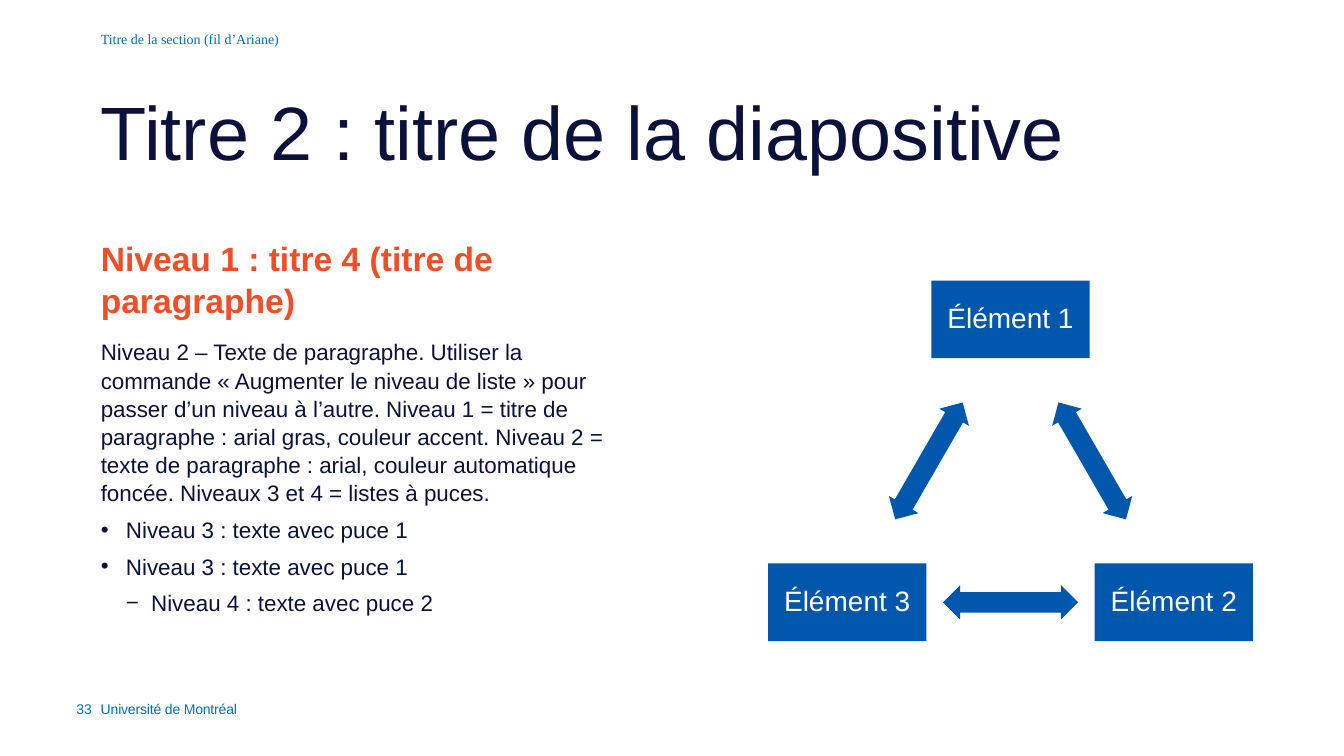
from dataclasses import dataclass
from math import cos, degrees, atan2, radians, sin
from typing import Optional

from lxml.etree import SubElement
from pptx import Presentation
from pptx.dml.color import RGBColor
from pptx.enum.shapes import MSO_SHAPE as Preset
from pptx.enum.text import MSO_ANCHOR as Anchor, PP_ALIGN as Align
from pptx.oxml.ns import qn
from pptx.util import Inches, Pt

NAVY = RGBColor(0x0B, 0x11, 0x3A)
ORANGE = RGBColor(0xF0, 0x4E, 0x26)
SKY = RGBColor(0x00, 0x6C, 0xB7)
BLUE = RGBColor(0x00, 0x57, 0xAC)
WHITE = RGBColor(0xFF, 0xFF, 0xFF)

PAGE_WIDTH, PAGE_HEIGHT = Inches(13.33), Inches(7.5)
COLUMN, ROW = PAGE_WIDTH / 100, PAGE_HEIGHT / 100
MARGIN = 7.5
FOOTER_TOP, FOOTER_HEIGHT = 92.67, 5.33


@dataclass(frozen=True)
class Area:
    """A rectangle in columns (left, width) and rows (top, height)."""
    left: float
    top: float
    width: float
    height: float

    def place(self) -> tuple[int, int, int, int]:
        return (round(self.left * COLUMN), round(self.top * ROW),
                round(self.width * COLUMN), round(self.height * ROW))


@dataclass(frozen=True)
class Para:
    text: str
    size: float
    color: RGBColor = NAVY
    font: str = "Arial"
    bold: bool = False
    align: Align = Align.LEFT
    line_spacing: float = 1.0
    before: float = 0
    after: float = 0
    bullet: Optional[str] = None
    indent: float = 0
    hanging: float = 0
    tracking: float = 0


@dataclass(frozen=True)
class TextBlock:
    area: Area
    paras: tuple[Para, ...]


def list_item(text: str, bullet: str, indent: float, after: float) -> Para:
    return Para(text, 16, line_spacing=1.05, after=after, bullet=bullet,
                indent=indent, hanging=0.25)


BLOCKS = (
    TextBlock(Area(MARGIN, FOOTER_TOP, 59.1, FOOTER_HEIGHT),
              (Para("Université de Montréal", 10, SKY, tracking=-0.1),)),
    TextBlock(Area(MARGIN, 31.2, 39, 58.13), (
        Para("Niveau 1 : titre 4 (titre de paragraphe)", 24, ORANGE, bold=True,
             line_spacing=1.05, after=6),
        Para("Niveau 2 – Texte de paragraphe. Utiliser la commande "
             "« Augmenter le niveau de liste » pour passer d’un niveau à l’autre. "
             "Niveau 1 = titre de paragraphe : arial gras, couleur accent. "
             "Niveau 2 = texte de paragraphe : arial, couleur automatique foncée. "
             "Niveaux 3 et 4 = listes à puces.", 16,
             line_spacing=1.05, before=6, after=6),
        list_item("Niveau 3 : texte avec puce 1", "•", 0.25, 6),
        list_item("Niveau 3 : texte avec puce 1", "•", 0.25, 6),
        list_item("Niveau 4 : texte avec puce 2", "−", 0.5, 5),
    )),
    TextBlock(Area(MARGIN, 12.53, 86.25, 12.13),
              (Para("Titre 2 : titre de la diapositive", 54, line_spacing=0.9),)),
    TextBlock(Area(MARGIN, 4, 36.3, 6),
              (Para("Titre de la section (fil d’Ariane)", 10, SKY, "Times New Roman"),)),
    TextBlock(Area(3.75, FOOTER_TOP, 3.38, FOOTER_HEIGHT),
              (Para("33", 10, SKY, align=Align.CENTER, indent=0.22, tracking=-0.1),)),
)

# Cycle of elements: an equilateral triangle, clockwise from the top
ELEMENTS = ("Élément 1", "Élément 2", "Élément 3")
CYCLE_X, CYCLE_Y, CYCLE_RADIUS = 75.19 * COLUMN, 67.2 * ROW, 14.03 * COLUMN
ELEMENT_WIDTH, ELEMENT_HEIGHT = 11.78, 10.27
ARROW_WIDTH, ARROW_HEIGHT = 10.05, 4.53


def write_para(paragraph, para: Para) -> None:
    paragraph.text = para.text
    properties = paragraph._p.get_or_add_pPr()
    if para.indent:
        properties.set("marL", str(Inches(para.indent)))
        properties.set("indent", str(-Inches(para.hanging)))
    if para.bullet:
        SubElement(properties, qn("a:buFont"), typeface="Arial")
        SubElement(properties, qn("a:buChar"), char=para.bullet)
    paragraph.alignment = para.align
    paragraph.line_spacing = para.line_spacing
    paragraph.space_before, paragraph.space_after = Pt(para.before), Pt(para.after)
    for span in paragraph.runs:
        font = span.font
        font.name, font.size, font.bold = para.font, Pt(para.size), para.bold
        font.color.rgb = para.color
        if para.tracking:
            span._r.get_or_add_rPr().set("spc", str(round(para.tracking * 100)))


def set_margins(frame, margin: int) -> None:
    frame.margin_left = frame.margin_right = margin
    frame.margin_top = frame.margin_bottom = margin


def add_text_block(page, block: TextBlock) -> None:
    frame = page.shapes.add_textbox(*block.area.place()).text_frame
    frame.word_wrap = True
    set_margins(frame, 0)
    for index, para in enumerate(block.paras):
        write_para(frame.add_paragraph() if index else frame.paragraphs[0], para)


def add_blue_shape(page, preset: Preset, center: tuple[float, float],
                   width: float, height: float):
    x, y = center
    area = Area(x / COLUMN - width / 2, y / ROW - height / 2, width, height)
    shape = page.shapes.add_shape(preset, *area.place())
    shape.shadow.inherit = False
    shape.fill.solid()
    shape.fill.fore_color.rgb = BLUE
    shape.line.fill.background()
    return shape


def add_element(page, label: str, center: tuple[float, float]) -> None:
    box = add_blue_shape(page, Preset.RECTANGLE, center, ELEMENT_WIDTH, ELEMENT_HEIGHT)
    frame = box.text_frame
    frame.word_wrap = True
    frame.vertical_anchor = Anchor.MIDDLE
    set_margins(frame, Inches(0.08))
    write_para(frame.paragraphs[0],
               Para(label, 20, WHITE, align=Align.CENTER, line_spacing=0.9))


def add_arrow(page, start: tuple[float, float], end: tuple[float, float]) -> None:
    """Put a double arrow halfway between two points, turned along their line."""
    middle = ((start[0] + end[0]) / 2, (start[1] + end[1]) / 2)
    arrow = add_blue_shape(page, Preset.LEFT_RIGHT_ARROW, middle, ARROW_WIDTH, ARROW_HEIGHT)
    arrow.adjustments[0], arrow.adjustments[1] = 0.6, 0.5
    arrow.rotation = degrees(atan2(end[1] - start[1], end[0] - start[0])) % 360


def add_cycle(page) -> None:
    step = 360 / len(ELEMENTS)
    angles = [radians(index * step - 90) for index in range(len(ELEMENTS))]
    centers = [(CYCLE_X + CYCLE_RADIUS * cos(angle), CYCLE_Y + CYCLE_RADIUS * sin(angle))
               for angle in angles]
    for index, label in enumerate(ELEMENTS):
        add_element(page, label, centers[index])
        add_arrow(page, centers[index], centers[(index + 1) % len(centers)])


def main() -> None:
    deck = Presentation()
    deck.slide_width, deck.slide_height = PAGE_WIDTH, PAGE_HEIGHT
    page = deck.slides.add_slide(deck.slide_layouts[6])
    add_cycle(page)
    for block in BLOCKS:
        add_text_block(page, block)
    deck.save("out.pptx")


if __name__ == "__main__":
    main()
